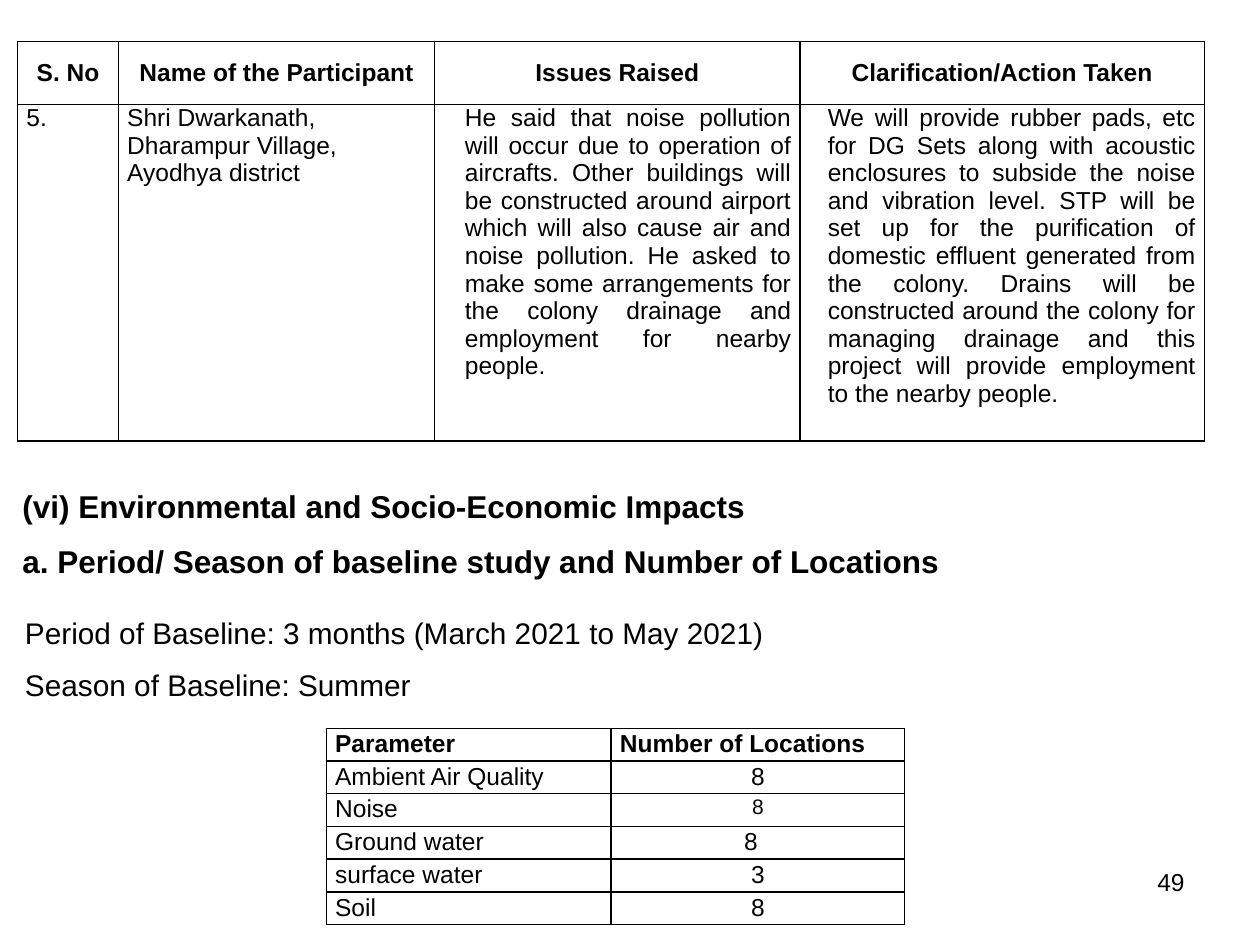
from lxml import etree
from pptx import Presentation
from pptx.dml.color import RGBColor
from pptx.enum import text
from pptx.oxml.ns import qn
from pptx.util import Inches, Pt

BLACK = "000000"
LEFT, CENTER, RIGHT, JUSTIFY = (
    text.PP_ALIGN.LEFT, text.PP_ALIGN.CENTER, text.PP_ALIGN.RIGHT, text.PP_ALIGN.JUSTIFY)
CELL_MARGIN = 0.07

ISSUES = (
    "He said that noise pollution will occur due to operation of aircrafts. "
    "Other buildings will be constructed around airport which will also cause air "
    "and noise pollution. He asked to make some arrangements for the colony "
    "drainage and employment for nearby people.")
ACTION = (
    "We will provide rubber pads, etc for DG Sets along with acoustic enclosures to "
    "subside the noise and vibration level. STP will be set up for the purification "
    "of domestic effluent generated from the colony. Drains will be constructed "
    "around the colony for managing drainage and this project will provide "
    "employment to the nearby people.")
HEARING = [
    ["S. No", "Name of the Participant", "Issues Raised", "Clarification/Action Taken"],
    ["5.", "Shri Dwarkanath, Dharampur Village, Ayodhya district", ISSUES, ACTION],
]
LOCATIONS = [
    ["Parameter", "Number of Locations"],
    ["Ambient Air Quality", "8"],
    ["Noise", "8"],
    ["Ground water", "8"],
    ["surface water", "3"],
    ["Soil", "8"],
]


def color(hex_code):
    return RGBColor.from_string(hex_code)


def style(p, size, align, bold=False):
    p.alignment = align
    p.font.name = "Arial"
    p.font.size = Pt(size)
    p.font.bold = bold
    p.font.color.rgb = color(BLACK)


def add_text(slide, box, lines, size, align, bold=False, before=0):
    tf = slide.shapes.add_textbox(*map(Inches, box)).text_frame
    tf.word_wrap = True
    for i, line in enumerate(lines):
        p = tf.paragraphs[0] if i == 0 else tf.add_paragraph()
        p.text = line
        style(p, size, align, bold)
        p.space_before = Pt(before)


def add_borders(cell):
    tc_pr = cell._tc.get_or_add_tcPr()
    for side in ("lnL", "lnR", "lnT", "lnB"):
        ln = etree.SubElement(tc_pr, qn(f"a:{side}"), w=str(Pt(1)))
        fill = etree.SubElement(ln, qn("a:solidFill"))
        etree.SubElement(fill, qn("a:srgbClr"), val=BLACK)


def add_grid(slide, left, top, widths, heights, rows):
    """Add a plain bordered table with a bold first row."""
    table = slide.shapes.add_table(
        len(rows), len(widths), Inches(left), Inches(top),
        Inches(sum(widths)), Inches(sum(heights))).table
    table.first_row = table.horz_banding = False
    for column, width in zip(table.columns, widths):
        column.width = Inches(width)
    for r, (height, values) in enumerate(zip(heights, rows)):
        table.rows[r].height = Inches(height)
        for c, value in enumerate(values):
            cell = table.cell(r, c)
            cell.text = value
            cell.margin_left = cell.margin_right = Inches(CELL_MARGIN)
            cell.margin_top = cell.margin_bottom = 0
            add_borders(cell)
            cell.fill.background()
            style(cell.text_frame.paragraphs[0], 14, LEFT, bold=r == 0)
    return table


def add_hearing_table(slide):
    table = add_grid(slide, 0.14, 0.33, [0.8, 2.51, 2.9, 3.21], [0.5, 2.67], HEARING)
    for cell in table.rows[0].cells:
        cell.vertical_anchor = text.MSO_ANCHOR.MIDDLE
        cell.text_frame.paragraphs[0].alignment = CENTER
    for c, indent in ((2, 0.17), (3, 0.15)):
        cell = table.cell(1, c)
        cell.margin_left = Inches(CELL_MARGIN + indent)
        cell.text_frame.paragraphs[0].alignment = JUSTIFY


def add_locations_table(slide):
    table = add_grid(slide, 2.59, 5.78, [2.26, 2.33], [0.26] * len(LOCATIONS), LOCATIONS)
    for r in range(len(LOCATIONS)):
        for c in range(2):
            p = table.cell(r, c).text_frame.paragraphs[0]
            p.line_spacing = 1.07
            p.alignment = CENTER if r and c else JUSTIFY
    table.cell(2, 1).text_frame.paragraphs[0].font.size = Pt(12)
    table.cell(3, 1).margin_right = Inches(CELL_MARGIN + 0.11)


def main():
    prs = Presentation()
    prs.slide_width, prs.slide_height = Inches(10), Inches(7.5)
    slide = prs.slides.add_slide(prs.slide_layouts[6])
    add_text(slide, (7.17, 6.83, 2.33, 0.52), ["49"], 14, RIGHT)
    add_text(slide, (0.08, 3.82, 9.47, 0.86),
             ["(vi) Environmental and Socio-Economic Impacts",
              "a. Period/ Season of baseline study and Number of Locations"],
             18, JUSTIFY, bold=True, before=9.5)
    add_text(slide, (0.1, 4.83, 9.4, 0.82),
             ["Period of Baseline: 3 months (March 2021 to May 2021)",
              "Season of Baseline: Summer"],
             17, LEFT, before=9.5)
    add_locations_table(slide)
    add_hearing_table(slide)
    prs.save("out.pptx")


if __name__ == "__main__":
    main()
